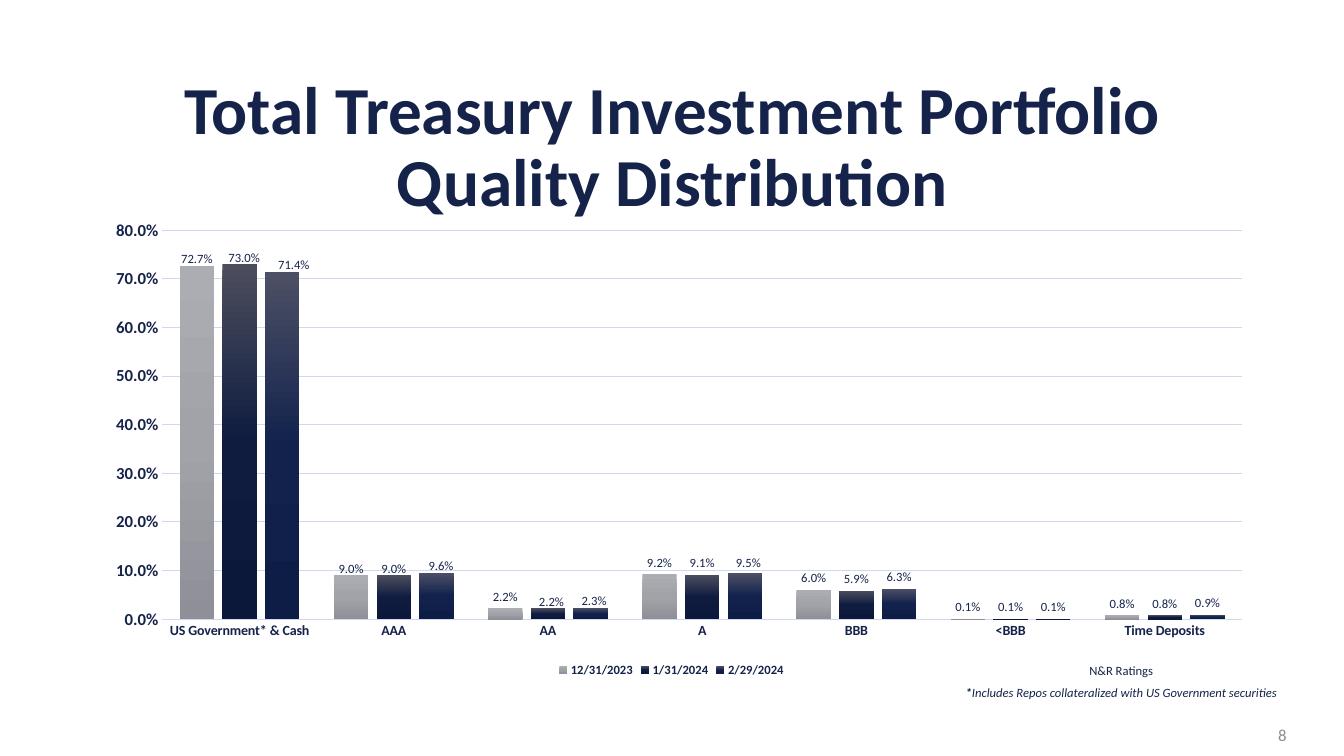
from dataclasses import dataclass, field

from lxml import etree
from pptx import Presentation
from pptx.chart.data import CategoryChartData
from pptx.dml.color import RGBColor
from pptx.enum.chart import XL_CHART_TYPE, XL_LABEL_POSITION, XL_LEGEND_POSITION, XL_TICK_MARK
from pptx.enum.text import MSO_ANCHOR, PP_ALIGN
from pptx.oxml import parse_xml
from pptx.oxml.ns import nsdecls, qn
from pptx.util import Inches, Pt

COLUMNS = XL_CHART_TYPE.COLUMN_CLUSTERED
OUTSIDE_END = XL_LABEL_POSITION.OUTSIDE_END
BOTTOM = XL_LEGEND_POSITION.BOTTOM
NO_TICK = XL_TICK_MARK.NONE
MIDDLE = MSO_ANCHOR.MIDDLE
CENTER = PP_ALIGN.CENTER
RIGHT = PP_ALIGN.RIGHT

FONT = "Calibri"
NAVY = "15234A"
PALE_BLUE = "CFD8F1"
GRAY = "8C8D96"
PERCENT = "0.0%"
RATINGS = ["US Government* & Cash", "AAA", "AA", "A", "BBB", "<BBB", "Time Deposits"]


@dataclass
class Month:
    name: str
    shares: list[float]
    gradient: list[str]
    label_shifts: dict[int, tuple[float, float]] = field(default_factory=dict)


@dataclass
class Words:
    text: str
    size: float
    color: str = NAVY
    bold: bool = False
    italic: bool = False


MONTHS = [
    Month("12/31/2023", [0.727, 0.09, 0.022, 0.092, 0.06, 0.001, 0.008],
          ["ACADB3", "A2A3A9", "8F9097"],
          {0: (0, 0.01), 1: (0, 0.01)}),
    Month("1/31/2024", [0.73, 0.09, 0.022, 0.091, 0.059, 0.001, 0.008],
          ["4C4E5D", "0F1C40", "0C183A"],
          {0: (0.004, 0.01), 1: (0, 0.01), 2: (0.003, 0.01)}),
    Month("2/29/2024", [0.714, 0.096, 0.023, 0.095, 0.063, 0.001, 0.009],
          ["4D5065", "12224D", "0E1D46"],
          {0: (0.01, 0.01), 1: (0.004, 0.01), 2: (0.003, 0.01), 3: (0.003, 0.004)}),
]


def rgb(color: str) -> RGBColor:
    return RGBColor.from_string(color)


def style_font(font, size: float, color: str = NAVY, bold: bool = False, italic: bool = False) -> None:
    font.name = FONT
    font.size = Pt(size)
    font.bold = bold
    font.italic = italic
    font.color.rgb = rgb(color)


def add_words(paragraph, words: Words) -> None:
    run = paragraph.add_run()
    run.text = words.text
    style_font(run.font, words.size, words.color, words.bold, words.italic)


def add_text(slide, box: tuple[float, ...], lines: list[list[Words]], align, anchor=None) -> None:
    frame = slide.shapes.add_textbox(*map(Inches, box)).text_frame
    frame.word_wrap = True
    frame.vertical_anchor = anchor
    for index, line in enumerate(lines):
        paragraph = frame.add_paragraph() if index else frame.paragraphs[0]
        paragraph.alignment = align
        if index:
            paragraph.space_before = Pt(5)
        for words in line:
            add_words(paragraph, words)


def add_title(slide) -> None:
    title = slide.shapes.title
    title.left, title.top, title.width, title.height = map(Inches, (0.92, 0.75, 11.5, 1.45))
    title.text_frame.vertical_anchor = MIDDLE
    paragraph = title.text_frame.paragraphs[0]
    paragraph.alignment = CENTER
    paragraph.line_spacing = 0.9
    add_words(paragraph, Words("Total Treasury Investment Portfolio", 48, bold=True))
    paragraph.add_line_break()
    add_words(paragraph, Words("Quality Distribution", 48, bold=True))


def manual_layout(**settings: object):
    layout = parse_xml(f"<c:layout {nsdecls('c')}><c:manualLayout/></c:layout>")
    for tag, value in settings.items():
        etree.SubElement(layout[0], qn(f"c:{tag}")).set("val", str(value))
    return layout


def fill_gradient(series, colors: list[str]) -> None:
    stops = "".join(
        f'<a:gs pos="{index * 50000}"><a:srgbClr val="{color}"/></a:gs>'
        for index, color in enumerate(colors)
    )
    series.format.line.fill.background()
    series._element.get_or_add_spPr().insert(0, parse_xml(
        f"<a:gradFill {nsdecls('a')} rotWithShape=\"1\"><a:gsLst>{stops}</a:gsLst>"
        '<a:lin ang="5400000" scaled="0"/></a:gradFill>'
    ))


def style_series(series, month: Month) -> None:
    fill_gradient(series, month.gradient)
    labels = series.data_labels
    labels.show_value = True
    labels.position = OUTSIDE_END
    labels.number_format = PERCENT
    labels.number_format_is_linked = False
    style_font(labels.font, 9)
    for index, (x, y) in month.label_shifts.items():
        label = series.points[index].data_label
        style_font(label.font, 9)
        label.position = OUTSIDE_END
        number_format = parse_xml(
            f'<c:numFmt {nsdecls("c")} formatCode="{PERCENT}" sourceLinked="0"/>'
        )
        for idx in labels._element.findall(f"{qn('c:dLbl')}/{qn('c:idx')}"):
            if idx.get("val") == str(index):
                idx.addnext(number_format)
                idx.addnext(manual_layout(x=x, y=y))


def add_quality_chart(slide) -> None:
    data = CategoryChartData(number_format=PERCENT)
    data.categories = RATINGS
    for month in MONTHS:
        data.add_series(month.name, month.shares)
    box = map(Inches, (0.91, 2.1, 11.5, 4.66))
    chart = slide.shapes.add_chart(COLUMNS, *box, data).chart
    chart.has_title = False
    style_font(chart.font, 12, bold=True)

    chart.has_legend = True
    chart.legend.position = BOTTOM
    chart.legend.include_in_layout = False
    style_font(chart.legend.font, 9, bold=True)

    for axis, size in ((chart.category_axis, 10), (chart.value_axis, 12)):
        axis.major_tick_mark = NO_TICK
        axis.minor_tick_mark = NO_TICK
        axis.tick_labels.number_format = PERCENT
        axis.tick_labels.number_format_is_linked = False
        style_font(axis.tick_labels.font, size, bold=True)
    rating_line = chart.category_axis.format.line
    rating_line.color.rgb = rgb(PALE_BLUE)
    rating_line.width = Pt(1)
    shares = chart.value_axis
    shares.minimum_scale, shares.maximum_scale, shares.major_unit = 0, 0.8, 0.1
    shares.format.line.fill.background()
    shares.major_gridlines.format.line.color.rgb = rgb(PALE_BLUE)
    shares.major_gridlines.format.line.width = Pt(0.75)

    plot = chart.plots[0]
    plot.gap_width = 100
    plot.overlap = -24
    plot.vary_by_categories = False
    for series, month in zip(plot.series, MONTHS):
        style_series(series, month)

    plot_area = chart._chartSpace.chart.plotArea
    for layout in plot_area.findall(qn("c:layout")):
        plot_area.remove(layout)
    plot_area.insert(0, manual_layout(
        layoutTarget="inner", xMode="edge", yMode="edge", x=0.061, y=0.04, w=0.931, h=0.828
    ))


def main() -> None:
    deck = Presentation()
    deck.slide_width, deck.slide_height = Inches(13.33), Inches(7.5)
    slide = deck.slides.add_slide(deck.slide_layouts[5])
    add_title(slide)
    add_quality_chart(slide)
    add_text(slide, (9.45, 6.53, 3.34, 0.48), [
        [Words("N&R Ratings", 9)],
        [Words("*", 9, bold=True, italic=True),
         Words("Includes Repos collateralized with US Government securities", 9, italic=True)],
    ], CENTER)
    add_text(slide, (9.86, 7.09, 3, 0.4), [[Words("8", 12, GRAY)]], RIGHT, MIDDLE)
    deck.save("out.pptx")


if __name__ == "__main__":
    main()
